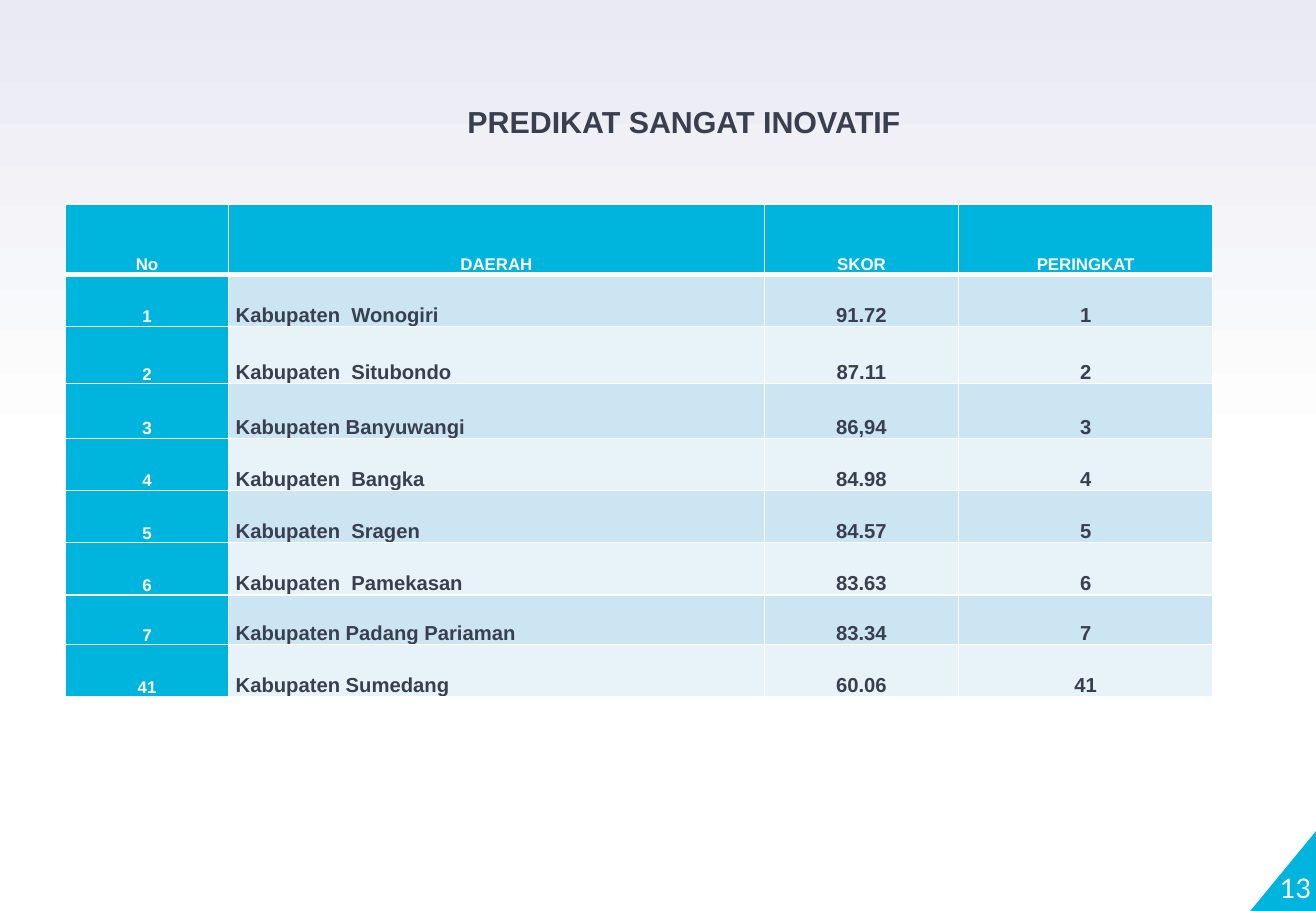
from copy import deepcopy
from dataclasses import dataclass

from lxml.etree import SubElement
from pptx import Presentation
from pptx.dml.color import RGBColor as Color
from pptx.enum.shapes import MSO_SHAPE as Preset
from pptx.enum.text import MSO_ANCHOR as Anchor, MSO_AUTO_SIZE as AutoSize, PP_ALIGN as Align
from pptx.oxml.ns import qn
from pptx.slide import Slide
from pptx.table import _Cell as Cell
from pptx.text.text import TextFrame
from pptx.util import Inches, Length, Pt

SLIDE_WIDTH, SLIDE_HEIGHT = Inches(10.83), Inches(7.5)


@dataclass(frozen=True)
class Theme:
    accent: str = "00B5DD"
    ink: str = "3A3F50"
    white: str = "FFFFFF"
    sky: str = "E9EAF2"
    odd_row: str = "CCE5F2"
    even_row: str = "E7F3F9"
    body_font: str = "Arial"
    number_font: str = "Lato"
    title_size: float = 18
    page_size: float = 16
    body_size: float = 12
    label_size: float = 10
    thin_line: float = 1
    thick_line: float = 3


@dataclass(frozen=True)
class Box:
    """A place in percent of the slide's width and height."""
    left: float
    top: float
    width: float
    height: float

    def lengths(self) -> tuple[Length, Length, Length, Length]:
        return across(self.left), down(self.top), across(self.width), down(self.height)


@dataclass(frozen=True)
class Style:
    size: float
    color: str
    font: str = Theme.body_font
    bold: bool = True
    align: Align = Align.CENTER


@dataclass(frozen=True)
class Region:
    rank: str
    name: str
    score: str
    height: float = 5.73
    label_size: float = Theme.label_size


THEME = Theme()
TITLE_BOX = Box(26.13, 10.4, 51.71, 5.33)
CORNER_BOX = Box(95.01, 90.93, 5.17, 9.07)
PAGE_BOX = Box(94.64, 90.13, 4.99, 9.07)
TABLE_LEFT, TABLE_TOP = 4.99, 22.4
COLUMN_WIDTHS = (12.37, 40.72, 14.77, 19.3)
HEADER_HEIGHT = 7.73
HEADINGS = ("No", "DAERAH", "SKOR", "PERINGKAT")
REGIONS = (
    Region("1", "Kabupaten  Wonogiri", "91.72"),
    Region("2", "Kabupaten  Situbondo", "87.11", height=6.27),
    Region("3", "Kabupaten Banyuwangi", "86,94", height=6, label_size=10.5),
    Region("4", "Kabupaten  Bangka", "84.98"),
    Region("5", "Kabupaten  Sragen", "84.57"),
    Region("6", "Kabupaten  Pamekasan", "83.63"),
    Region("7", "Kabupaten Padang Pariaman", "83.34", height=5.47),
    Region("41", "Kabupaten Sumedang", "60.06"),
)


def across(percent: float) -> Length:
    return Length(round(SLIDE_WIDTH * percent / 100))


def down(percent: float) -> Length:
    return Length(round(SLIDE_HEIGHT * percent / 100))


def write(frame: TextFrame, text: str, style: Style, spaced: bool = True) -> None:
    paragraph = frame.paragraphs[0]
    paragraph.alignment = style.align
    if spaced:
        paragraph.line_spacing = 1.07
        paragraph.space_after = Pt(8)
    run = paragraph.add_run()
    run.text = text
    run.font.name = style.font
    run.font.size = Pt(style.size)
    run.font.bold = style.bold
    run.font.color.rgb = Color.from_string(style.color)


def draw_border(cell: Cell, side: str, width: float) -> None:
    properties = cell._tc.get_or_add_tcPr()
    line = SubElement(properties, qn(f"a:ln{side}"), w=str(Pt(width)))
    fill = SubElement(line, qn("a:solidFill"))
    SubElement(fill, qn("a:srgbClr"), val=THEME.white)


def fill_cell(cell: Cell, text: str, style: Style, fill: str,
              top_line: float, bottom_line: float) -> None:
    cell.vertical_anchor = Anchor.BOTTOM
    cell.margin_left = cell.margin_right = Inches(0.06)
    cell.margin_top = cell.margin_bottom = 0
    write(cell.text_frame, text, style)
    widths = {"L": THEME.thin_line, "R": THEME.thin_line, "T": top_line, "B": bottom_line}
    for side, width in widths.items():
        draw_border(cell, side, width)
    cell.fill.solid()
    cell.fill.fore_color.rgb = Color.from_string(fill)


def paint_background(slide: Slide) -> None:
    fill = slide.background.fill
    fill.gradient()
    fill.gradient_angle = 90
    white_stop, sky_stop = fill.gradient_stops
    white_stop.color.rgb = Color.from_string(THEME.white)
    sky_stop.color.rgb = Color.from_string(THEME.sky)
    # White holds over the lower half
    middle = deepcopy(white_stop._gs)
    middle.set("pos", "50000")
    white_stop._gs.addnext(middle)


def add_page_corner(slide: Slide, number: str) -> None:
    corner = slide.shapes.add_shape(Preset.RIGHT_TRIANGLE, *CORNER_BOX.lengths())
    corner.shadow.inherit = False
    corner.fill.solid()
    corner.fill.fore_color.rgb = Color.from_string(THEME.accent)
    corner.line.fill.background()
    corner._element.spPr.xfrm.set("flipH", "1")

    frame = slide.shapes.add_textbox(*PAGE_BOX.lengths()).text_frame
    frame.word_wrap = True
    frame.vertical_anchor = Anchor.BOTTOM
    frame.margin_left = frame.margin_right = frame.margin_top = frame.margin_bottom = 0
    style = Style(THEME.page_size, THEME.white, THEME.number_font, False, Align.RIGHT)
    write(frame, number, style, spaced=False)


def add_ranking(slide: Slide) -> None:
    heights = (HEADER_HEIGHT, *(region.height for region in REGIONS))
    box = Box(TABLE_LEFT, TABLE_TOP, sum(COLUMN_WIDTHS), sum(heights))
    table = slide.shapes.add_table(len(heights), len(COLUMN_WIDTHS), *box.lengths()).table
    for column, width in zip(table.columns, COLUMN_WIDTHS):
        column.width = across(width)
    for row, height in zip(table.rows, heights):
        row.height = down(height)

    # Header row
    heading = Style(THEME.label_size, THEME.white)
    for cell, text in zip(table.rows[0].cells, HEADINGS):
        fill_cell(cell, text, heading, THEME.accent, THEME.thin_line, THEME.thick_line)

    # One banded row for each region
    name_style = Style(THEME.body_size, THEME.ink, align=Align.LEFT)
    value_style = Style(THEME.body_size, THEME.ink)
    for index, region in enumerate(REGIONS, start=1):
        band = THEME.odd_row if index % 2 else THEME.even_row
        top_line = THEME.thick_line if index == 1 else THEME.thin_line
        entries = (
            (region.rank, Style(region.label_size, THEME.white), THEME.accent),
            (region.name, name_style, band),
            (region.score, value_style, band),
            (region.rank, value_style, band),
        )
        for cell, (text, style, fill) in zip(table.rows[index].cells, entries):
            fill_cell(cell, text, style, fill, top_line, THEME.thin_line)


def add_title(slide: Slide, text: str) -> None:
    frame = slide.shapes.add_textbox(*TITLE_BOX.lengths()).text_frame
    frame.word_wrap = True
    frame.auto_size = AutoSize.SHAPE_TO_FIT_TEXT
    write(frame, text, Style(THEME.title_size, THEME.ink))


def main() -> None:
    presentation = Presentation()
    presentation.slide_width, presentation.slide_height = SLIDE_WIDTH, SLIDE_HEIGHT
    slide = presentation.slides.add_slide(presentation.slide_layouts[6])
    paint_background(slide)
    add_page_corner(slide, "13")
    add_ranking(slide)
    add_title(slide, "PREDIKAT SANGAT INOVATIF")
    presentation.save("out.pptx")


if __name__ == "__main__":
    main()
